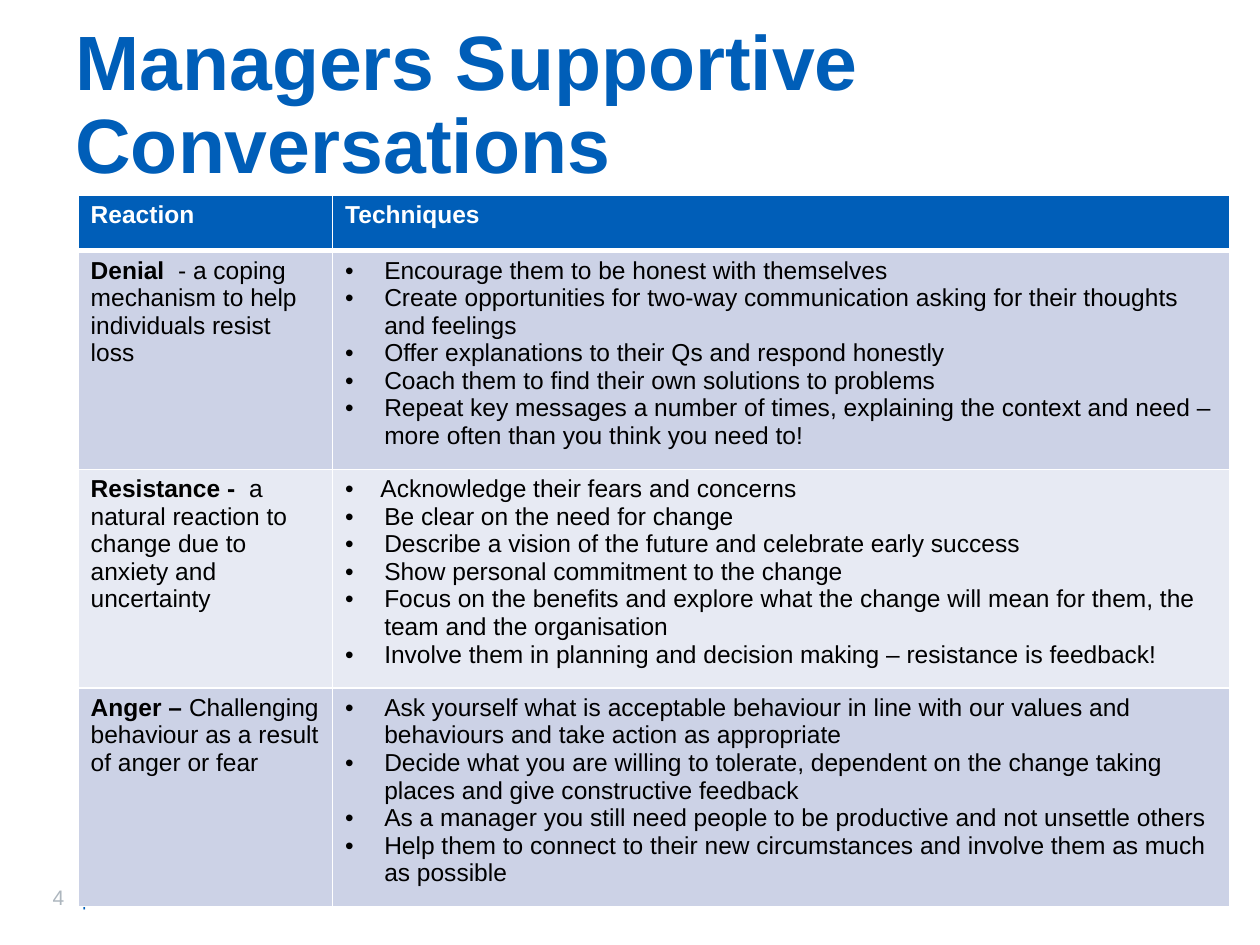
from lxml.etree import SubElement
from pptx import Presentation
from pptx.dml.color import RGBColor
from pptx.oxml import parse_xml
from pptx.oxml.ns import nsdecls, qn
from pptx.util import Inches, Pt

BLUE, WHITE, BLACK, GREY = "005EB8", "FFFFFF", "000000", "ADB6BE"
BANDS = ("CCD2E6", "E7EAF3")
TITLE = "Managers Supportive Conversations"
HEADINGS = ("Reaction", "Techniques")
REACTIONS = [
    ("Denial ", " - a coping mechanism to help individuals resist loss", [
        "Encourage them to be honest with themselves",
        "Create opportunities for two-way communication asking for their thoughts and feelings",
        "Offer explanations to their Qs and respond honestly",
        "Coach them to find their own solutions to problems",
        "Repeat key messages a number of times, explaining the context and need –"
        "more often than you think you need to!",
    ]),
    ("Resistance - ", " a natural reaction to change due to anxiety and uncertainty", [
        "Acknowledge their fears and concerns",
        "Be clear on the need for change",
        "Describe a vision of the future and celebrate early success",
        "Show personal commitment to the change",
        "Focus on the benefits and explore what the change will mean for them, "
        "the team and the organisation",
        "Involve them in planning and decision making – resistance is feedback!",
    ]),
    ("Anger – ", "Challenging behaviour as a result of anger or fear", [
        "Ask yourself what is acceptable behaviour in line with our values and behaviours "
        "and take action as appropriate",
        "Decide what you are willing to tolerate, dependent on the change taking places "
        "and give constructive feedback",
        "As a manager you still need people to be productive and not unsettle others",
        "Help them to connect to their new circumstances and involve them as much as possible",
    ]),
]


def color(value):
    return RGBColor.from_string(value)


class SlideBuilder:
    """Holds the text style and the current slide."""

    def __init__(self, slide, font_name="Arial", body_size=14):
        self.slide = slide
        self.font_name = font_name
        self.body_size = body_size

    def style(self, font, size, fill, bold=None):
        font.name, font.size, font.bold = self.font_name, Pt(size), bold
        font.color.rgb = color(fill)

    def text_box(self, left, top, width, height):
        box = self.slide.shapes.add_textbox(
            Inches(left), Inches(top), Inches(width), Inches(height))
        box.text_frame.word_wrap = True
        return box.text_frame.paragraphs[0]

    def title(self, text):
        paragraph = self.text_box(0.5, 0.14, 8.78, 0.73)
        paragraph.text = text
        paragraph.line_spacing = 0.9
        self.style(paragraph.font, 44, BLUE, True)

    def page_number(self, number):
        paragraph = self.text_box(0.32, 6.97, 0.71, 0.3)
        tabs = SubElement(paragraph._p.get_or_add_pPr(), qn("a:tabLst"))
        SubElement(tabs, qn("a:tab"), pos=str(Inches(0.23)), algn="l")
        for text, fill in ((f"{number}\t", GREY), ("|", BLUE)):
            run = paragraph.add_run()
            run.text = text
            self.style(run.font, 12, fill)

    def cell(self, cell, fill, top=1, bottom=1):
        cell.fill.solid()
        cell.fill.fore_color.rgb = color(fill)
        properties = cell._tc.get_or_add_tcPr()
        sides = (("lnL", 1), ("lnR", 1), ("lnT", top), ("lnB", bottom))
        for index, (side, width) in enumerate(sides):
            properties.insert(index, parse_xml(
                f'<a:{side} {nsdecls("a")} w="{Pt(width)}"><a:solidFill>'
                f'<a:srgbClr val="{WHITE}"/></a:solidFill></a:{side}>'))
        return cell.text_frame

    def reaction(self, frame, name, meaning):
        paragraph = frame.paragraphs[0]
        for text, bold in ((name, True), (meaning, False)):
            run = paragraph.add_run()
            run.text = text
            self.style(run.font, self.body_size, BLACK, bold)

    def bullets(self, frame, items):
        for index, item in enumerate(items):
            paragraph = frame.add_paragraph() if index else frame.paragraphs[0]
            paragraph.text = item
            indent = Inches(0.28 if item.startswith("Acknowledge") else 0.31)
            properties = paragraph._p.get_or_add_pPr()
            properties.set("marL", str(indent))
            properties.set("indent", str(-indent))
            SubElement(properties, qn("a:buFont"), typeface=self.font_name)
            SubElement(properties, qn("a:buChar"), char="•")
            self.style(paragraph.font, self.body_size, BLACK, False)

    def table(self, headings, reactions):
        table = self.slide.shapes.add_table(
            len(reactions) + 1, len(headings),
            Inches(0.62), Inches(1.55), Inches(9.14), Inches(5.63)).table
        table.first_row = table.horz_banding = False
        for column, width in zip(table.columns, (2.02, 7.12)):
            column.width = Inches(width)
        for index, row in enumerate(table.rows):
            row.height = Inches(1.73 if index else 0.44)
        for column, heading in enumerate(headings):
            paragraph = self.cell(table.cell(0, column), BLUE, bottom=3).paragraphs[0]
            paragraph.text = heading
            self.style(paragraph.font, self.body_size, WHITE, True)
        for row, (name, meaning, techniques) in enumerate(reactions, 1):
            fill = BANDS[(row - 1) % 2]
            left, right = (
                self.cell(table.cell(row, column), fill, top=3 if row == 1 else 1)
                for column in range(2))
            self.reaction(left, name, meaning)
            self.bullets(right, techniques)


def main():
    presentation = Presentation()
    presentation.slide_width, presentation.slide_height = Inches(10), Inches(7.5)
    builder = SlideBuilder(presentation.slides.add_slide(presentation.slide_layouts[6]))
    builder.page_number(4)
    builder.table(HEADINGS, REACTIONS)
    builder.title(TITLE)
    presentation.save("out.pptx")


if __name__ == "__main__":
    main()
